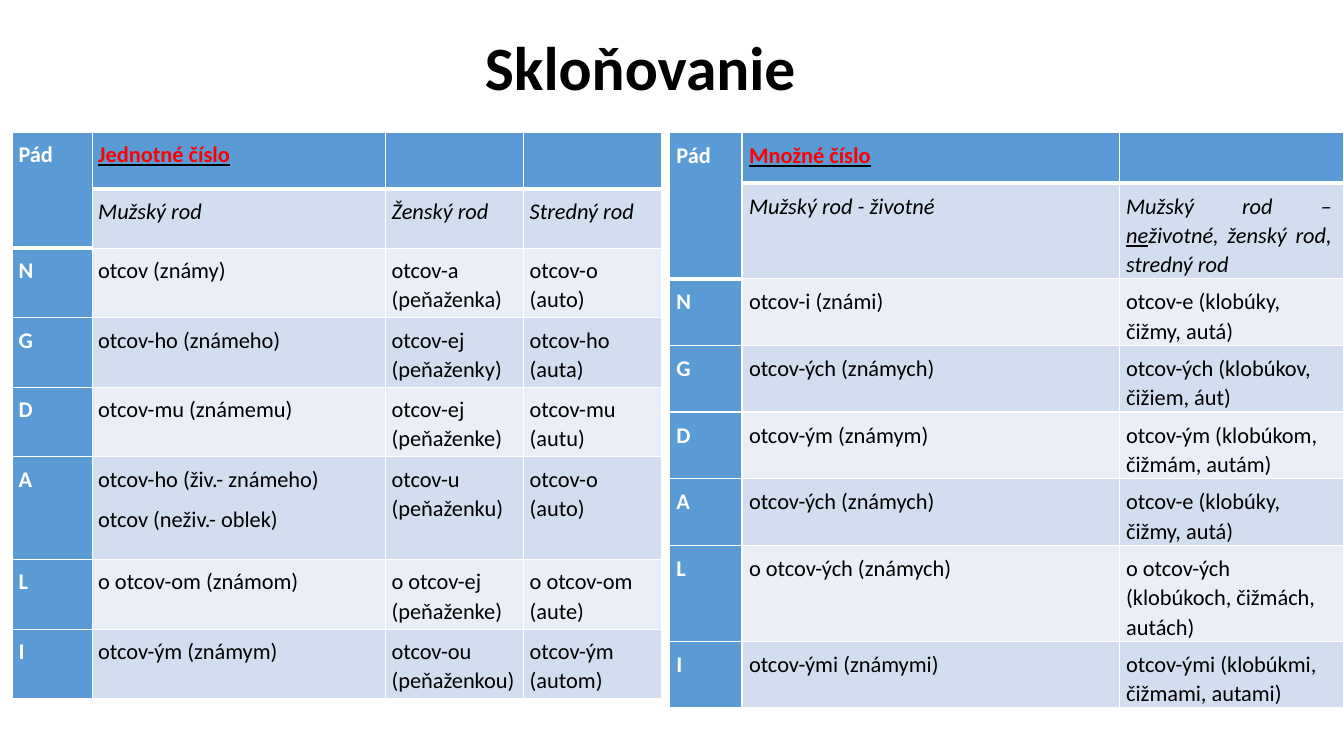
from dataclasses import dataclass

from lxml import etree
from pptx import Presentation
from pptx.dml.color import RGBColor
from pptx.enum.text import MSO_ANCHOR, PP_ALIGN
from pptx.oxml.ns import qn
from pptx.util import Inches, Pt

LEFT, JUSTIFY = PP_ALIGN.LEFT, PP_ALIGN.JUSTIFY
MIDDLE = MSO_ANCHOR.MIDDLE
TITLE_ONLY = 5


@dataclass(frozen=True)
class Theme:
    font: str = "Calibri"
    head: str = "5B9BD5"
    bands: tuple = ("EAEFF7", "D2DEEF")
    ink: str = "000000"
    white: str = "FFFFFF"
    red: str = "FF0000"
    big: float = 44
    text: float = 16
    lead: float = 1.07
    gap: float = 7.9
    thin: float = 1
    thick: float = 3


def tint(node, color):
    fill = etree.SubElement(node, qn("a:solidFill"))
    etree.SubElement(fill, qn("a:srgbClr"), val=color)


class Deck:
    def __init__(self, theme):
        self.theme = theme
        self.prs = Presentation()
        self.prs.slide_width, self.prs.slide_height = Inches(13.33), Inches(7.5)
        self.slide = self.prs.slides.add_slide(self.prs.slide_layouts[TITLE_ONLY])

    def wide(self, share):
        """Percent of the slide's width."""
        return int(self.prs.slide_width * share / 100)

    def high(self, share):
        """Percent of the slide's height."""
        return int(self.prs.slide_height * share / 100)

    def label(self, para, text, size, color, bold=False, slant=False, line=False):
        run = para.add_run()
        run.text = text
        font = run.font
        font.size, font.bold, font.italic = Pt(size), bold, slant
        font.color.rgb = RGBColor.from_string(color)
        if line:
            font.underline = True
            tint(etree.SubElement(run._r.get_or_add_rPr(), qn("a:uFill")), self.theme.ink)
        font.name = self.theme.font

    def title(self, text, left, top, width, height):
        box = self.slide.shapes.title
        box.left, box.top = self.wide(left), self.high(top)
        box.width, box.height = self.wide(width), self.high(height)
        frame = box.text_frame
        frame.vertical_anchor = MIDDLE
        para = frame.paragraphs[0]
        para.alignment, para.line_spacing = LEFT, 0.9
        self.label(para, text, self.theme.big, self.theme.ink, bold=True)

    def edge(self, cell, **sides):
        """Draw the four cell borders; sides overrides the thin width."""
        props = cell._tc.get_or_add_tcPr()
        for side in "LRTB":
            width = sides.get(side, self.theme.thin)
            line = etree.SubElement(props, qn(f"a:ln{side}"), w=str(Pt(width)))
            tint(line, self.theme.white)

    def words(self, cell, text, **look):
        """Fill a cell: newline parts paragraphs, underscores mark underlining."""
        frame = cell.text_frame
        lines = text.split("\n")
        for i, line in enumerate(lines):
            para = frame.paragraphs[0] if i == 0 else frame.add_paragraph()
            para.line_spacing = self.theme.lead
            if "–" in line:
                para.alignment = JUSTIFY
            if "živ.-" in line and i < len(lines) - 1:
                para.space_after = Pt(self.theme.gap)
            for k, part in enumerate(line.split("_")):
                if part:
                    self.label(para, part, self.theme.text, line=k % 2 == 1, **look)

    def table(self, left, top, cols, rows, inset, data):
        theme = self.theme
        grid = self.slide.shapes.add_table(
            len(rows), len(cols), self.wide(left), self.high(top),
            self.wide(sum(cols)), self.high(sum(rows))).table
        for col, share in zip(grid.columns, cols):
            col.width = self.wide(share)
        for row, share in zip(grid.rows, rows):
            row.height = self.high(share)
        grid.cell(0, 0).merge(grid.cell(1, 0))
        for r, line in enumerate(data):
            for c, text in enumerate(line):
                cell = grid.cell(r, c)
                last = 1 if c == 0 else 0
                sides = {}
                if r <= last:
                    sides["B"] = theme.thick
                elif r == last + 1:
                    sides["T"] = theme.thick
                self.edge(cell, **sides)
                head = r == 0 or c == 0
                cell.fill.solid()
                cell.fill.fore_color.rgb = RGBColor.from_string(
                    theme.head if head else theme.bands[r % 2])
                if not text:
                    continue
                (cell.margin_left, cell.margin_top,
                 cell.margin_right, cell.margin_bottom) = map(Inches, inset)
                color = theme.white if c == 0 else theme.red if r == 0 else theme.ink
                self.words(cell, text, color=color, bold=head, slant=r == 1)

    def save(self):
        self.prs.save("out.pptx")


SINGLE = [
    ("Pád", "_Jednotné číslo_", "", ""),
    ("", "Mužský rod", "Ženský rod", "Stredný rod"),
    ("N", "otcov (známy)", "otcov-a\n(peňaženka)", "otcov-o\n(auto)"),
    ("G", "otcov-ho (známeho)", "otcov-ej\n(peňaženky)", "otcov-ho\n(auta)"),
    ("D", "otcov-mu (známemu)", "otcov-ej\n(peňaženke)", "otcov-mu\n(autu)"),
    ("A", "otcov-ho (živ.- známeho)\notcov (neživ.- oblek)",
     "otcov-u\n(peňaženku)", "otcov-o\n(auto)"),
    ("L", "o otcov-om (známom)", "o otcov-ej\n(peňaženke)", "o otcov-om\n(aute)"),
    ("I", "otcov-ým (známym)", "otcov-ou\n(peňaženkou)", "otcov-ým\n(autom)"),
]
PLURAL = [
    ("Pád", "_Množné číslo_", ""),
    ("", "Mužský rod - životné", "Mužský rod – _ne_životné, ženský rod, stredný rod"),
    ("N", "otcov-i (známi)", "otcov-e (klobúky, čižmy, autá)"),
    ("G", "otcov-ých (známych)", "otcov-ých (klobúkov, čižiem, áut)"),
    ("D", "otcov-ým (známym)", "otcov-ým (klobúkom, čižmám, autám)"),
    ("A", "otcov-ých (známych)", "otcov-e (klobúky, čižmy, autá)"),
    ("L", "o otcov-ých (známych)", "o otcov-ých (klobúkoch, čižmách, autách)"),
    ("I", "otcov-ými (známymi)", "otcov-ými (klobúkmi, čižmami, autami)"),
]


def main():
    deck = Deck(Theme())
    deck.title("Skloňovanie", 35.33, 4, 27.68, 10.8)
    deck.table(0.93, 17.5, (5.93, 21.83, 10.28, 10.28),
               (7.47, 7.87, 9.2, 9.2, 9.2, 13.6, 9.2, 9.2),
               (0.06, 0.07, 0.06, 0), SINGLE)
    deck.table(49.81, 17.5, (5.4, 28.06, 16.73),
               (6.67, 10.93, 7.6, 7.6, 7.6, 7.6, 10.93, 7.6),
               (0.07, 0.08, 0.12, 0), PLURAL)
    deck.save()


if __name__ == "__main__":
    main()
